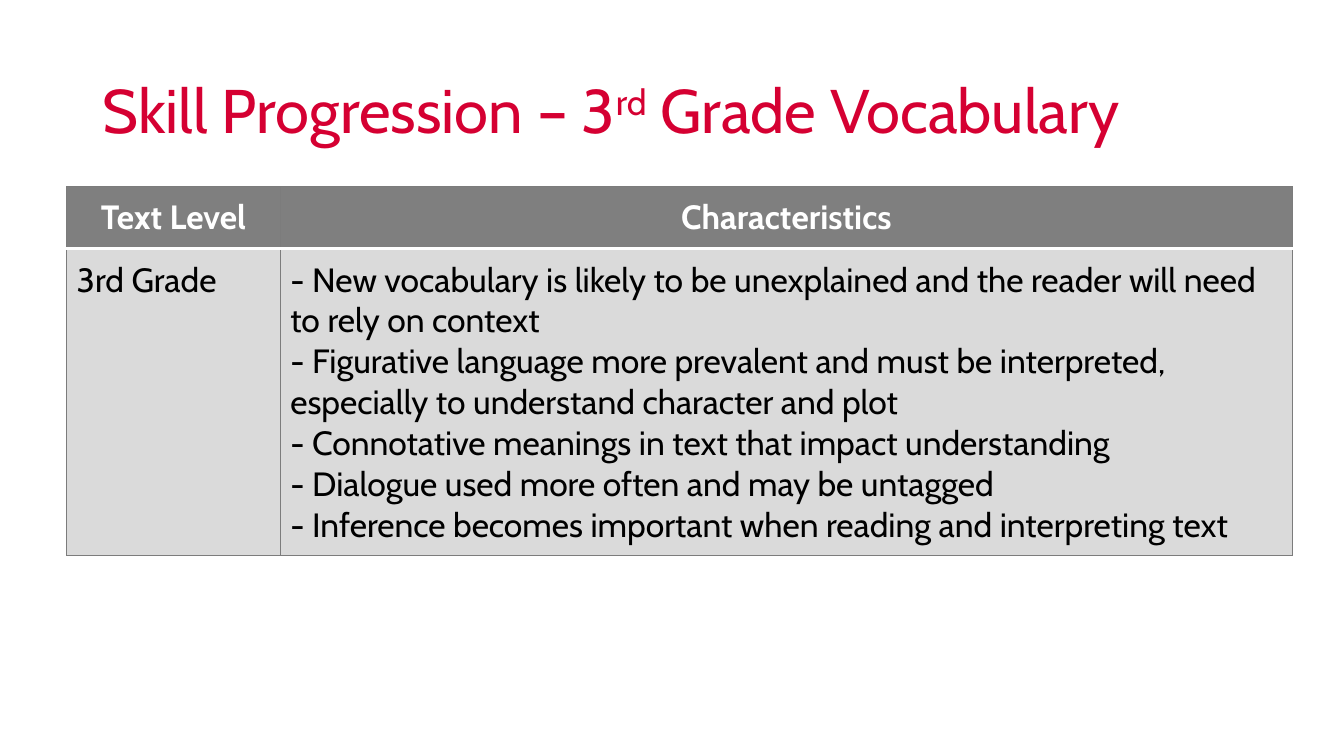
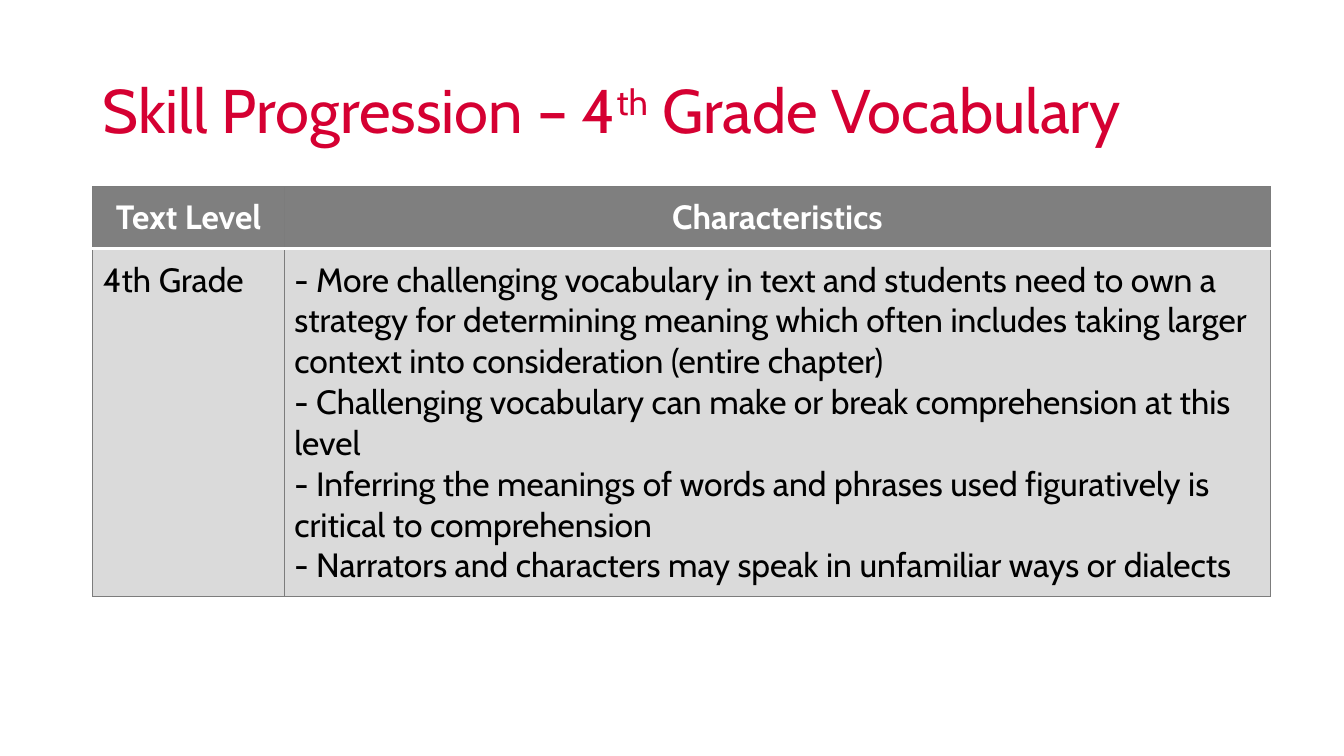
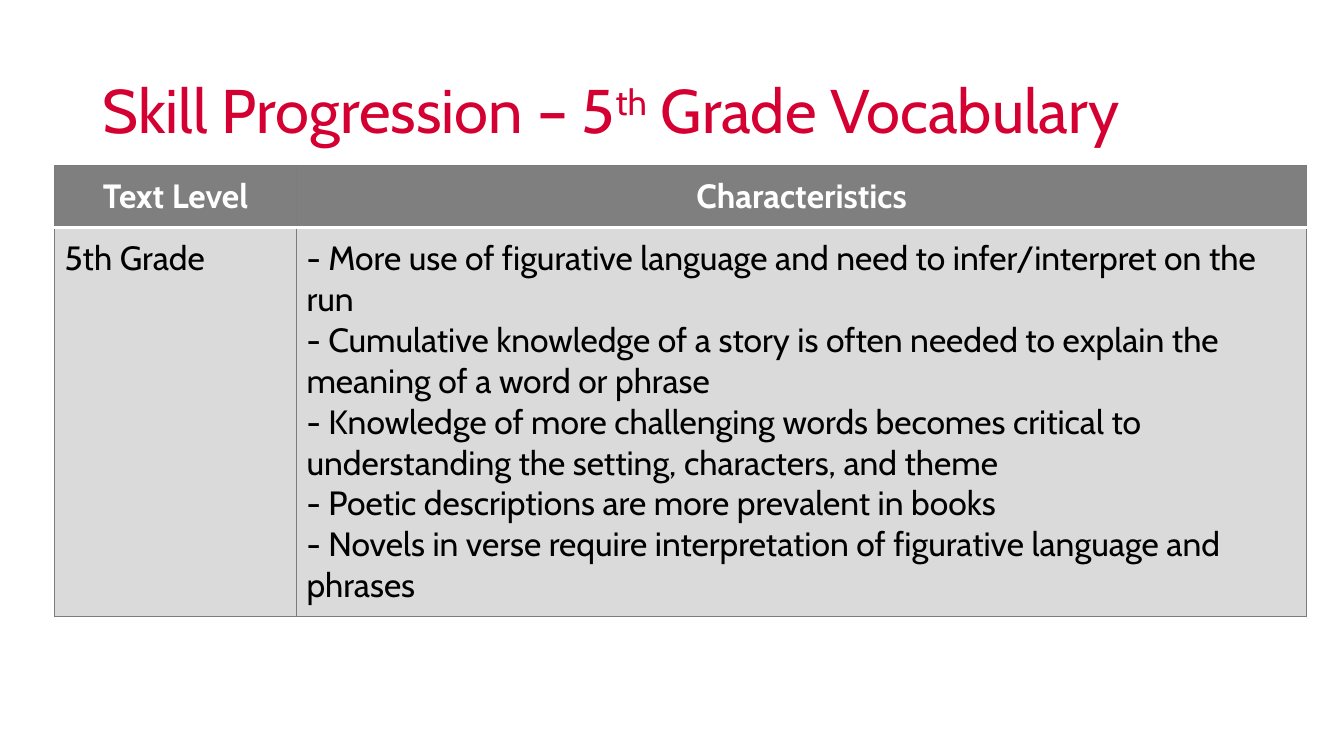
"""Build three slides on how vocabulary skills progress from 3rd to 5th grade."""
from lxml import etree
from pptx import Presentation
from pptx import util as u
from pptx.dml.color import RGBColor
from pptx.enum import text as t
from pptx.oxml import ns

FONT = "Cabin"
RED = RGBColor(0xD5, 0x00, 0x32)
WHITE = RGBColor(0xFF, 0xFF, 0xFF)
BLACK = RGBColor(0x00, 0x00, 0x00)
HEADER_GRAY = RGBColor(0x7F, 0x7F, 0x7F)
BODY_GRAY = RGBColor(0xDA, 0xDA, 0xDA)
BORDER_GRAY = RGBColor(0x7C, 0x7C, 0x7C)
HEADER_HEIGHT = 0.61

GRADES = [
    {
        "number": "3", "ending": "rd", "left": 0.66, "top": 1.85,
        "widths": (2.12, 10.04), "body_height": 3.05,
        "traits": [
            "- New vocabulary is likely to be unexplained and the reader will need to rely on context",
            "- Figurative language more prevalent and must be interpreted, especially to understand character and plot",
            "- Connotative meanings in text that impact understanding",
            "- Dialogue used more often and may be untagged",
            "- Inference becomes important when reading and interpreting text",
        ],
    },
    {
        "number": "4", "ending": "th", "left": 0.92, "top": 1.85,
        "widths": (1.9, 9.78), "body_height": 3.45,
        "traits": [
            "- More challenging vocabulary in text and students need to own a strategy for determining meaning "
            "which often includes taking larger context into consideration (entire chapter)",
            "- Challenging vocabulary can make or break comprehension at this level",
            "- Inferring the meanings of words and phrases used figuratively is critical to comprehension",
            "- Narrators and characters may speak in unfamiliar ways or dialects",
        ],
    },
    {
        "number": "5", "ending": "th", "left": 0.54, "top": 1.64,
        "widths": (2.4, 10.02), "body_height": 3.86,
        "traits": [
            "- More use of figurative language and need to infer/interpret on the run",
            "- Cumulative knowledge of a story is often needed to explain the meaning of a word or phrase",
            "- Knowledge of more challenging words becomes critical to understanding the setting, characters, and theme",
            "- Poetic descriptions are more prevalent in books",
            "- Novels in verse require interpretation of figurative language and phrases",
        ],
    },
]


def add_span(para, text, size=24, color=BLACK, bold=False, raised=False):
    span = para.add_run()
    span.text = text
    span.font.name = FONT
    span.font.size = u.Pt(size)
    span.font.bold = bold
    span.font.color.rgb = color
    if raised:
        span.font._element.set("baseline", "30000")


def add_border(cell, side, color, width):
    line = etree.SubElement(cell._tc.get_or_add_tcPr(), ns.qn(f"a:ln{side}"), w=str(u.Pt(width)))
    fill = etree.SubElement(line, ns.qn("a:solidFill"))
    etree.SubElement(fill, ns.qn("a:srgbClr"), val=str(color))


deck = Presentation()
deck.slide_width = u.Inches(13.33)
deck.slide_height = u.Inches(7.5)

for grade in GRADES:
    page = deck.slides.add_slide(deck.slide_layouts[6])

    heights = (HEADER_HEIGHT, grade["body_height"])
    frame = page.shapes.add_table(
        2, 2, u.Inches(grade["left"]), u.Inches(grade["top"]),
        u.Inches(sum(grade["widths"])), u.Inches(sum(heights)))
    table = frame.table
    table.horz_banding = False
    for column, width in zip(table.columns, grade["widths"]):
        column.width = u.Inches(width)
    for row, height in zip(table.rows, heights):
        row.height = u.Inches(height)

    contents = [
        [["Text Level"], ["Characteristics"]],
        [[f"{grade['number']}{grade['ending']} Grade"], grade["traits"]],
    ]
    for row_index, row_contents in enumerate(contents):
        is_header = row_index == 0
        divider = "B" if is_header else "T"
        for column_index, paragraphs in enumerate(row_contents):
            cell = table.cell(row_index, column_index)
            for side in "LRTB":
                if side == divider:
                    add_border(cell, side, WHITE, 2)
                else:
                    add_border(cell, side, BORDER_GRAY, 0.75)
            cell.fill.solid()
            cell.fill.fore_color.rgb = HEADER_GRAY if is_header else BODY_GRAY
            cell.margin_left = cell.margin_right = cell.margin_bottom = u.Inches(0.1)
            cell.margin_top = u.Inches(0.11)
            for index, text in enumerate(paragraphs):
                para = cell.text_frame.add_paragraph() if index else cell.text_frame.paragraphs[0]
                para.alignment = t.PP_ALIGN.CENTER if is_header else t.PP_ALIGN.LEFT
                add_span(para, text, color=WHITE if is_header else BLACK, bold=is_header)

    box = page.shapes.add_textbox(u.Inches(0.92), u.Inches(0.4), u.Inches(11.5), u.Inches(1.45))
    box.text_frame.word_wrap = True
    box.text_frame.auto_size = t.MSO_AUTO_SIZE.TEXT_TO_FIT_SHAPE
    box.text_frame.vertical_anchor = t.MSO_ANCHOR.MIDDLE
    title = box.text_frame.paragraphs[0]
    title.line_spacing = 0.9
    add_span(title, f"Skill Progression – {grade['number']}", size=44, color=RED)
    add_span(title, grade["ending"], size=44, color=RED, raised=True)
    add_span(title, " Grade Vocabulary", size=44, color=RED)

deck.save("out.pptx")
